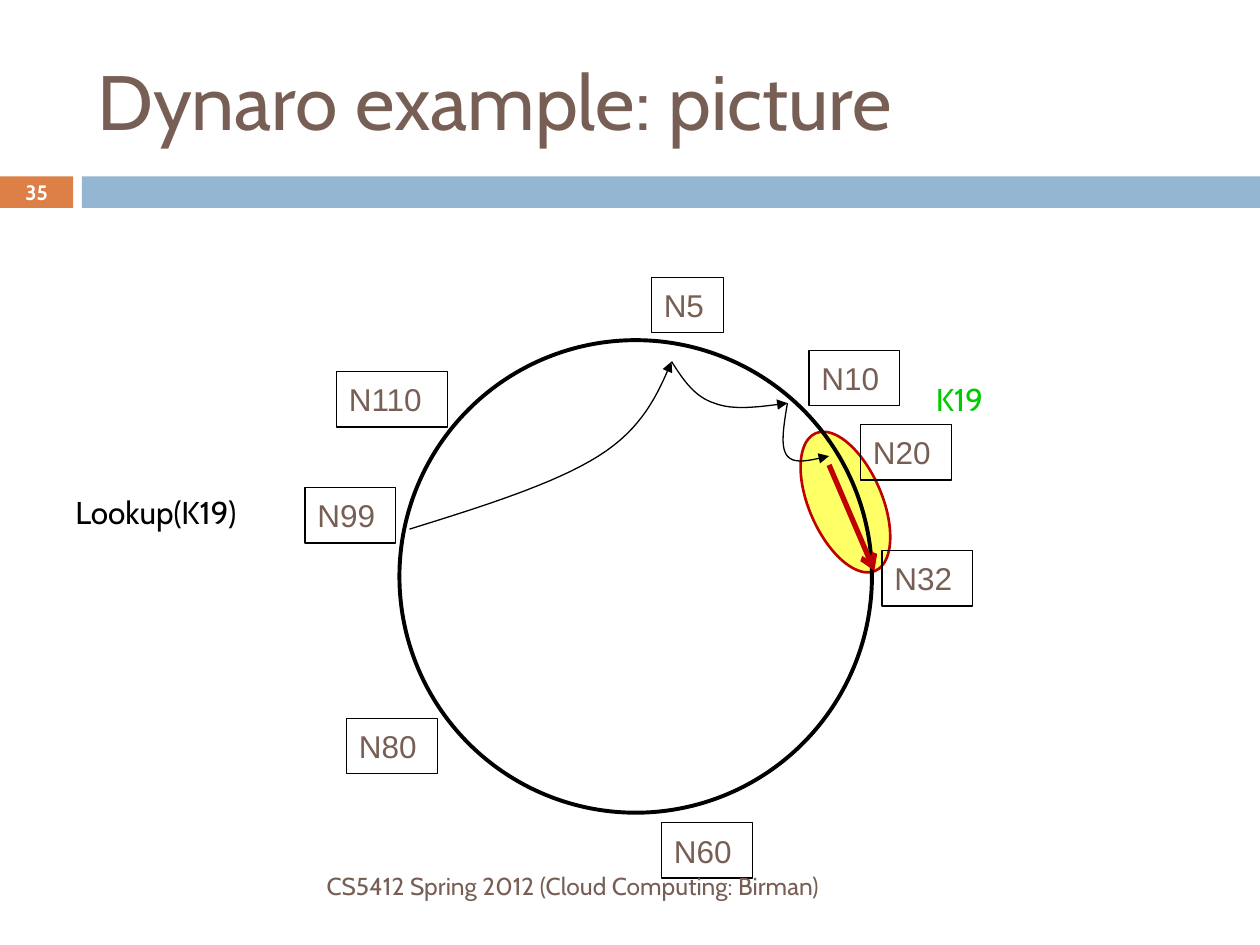
from pptx import Presentation
from pptx.dml.color import RGBColor
from pptx.enum.shapes import MSO_CONNECTOR as Connector, MSO_SHAPE as Shape
from pptx.enum.text import MSO_ANCHOR as Anchor, PP_ALIGN as Align
from pptx.oxml.ns import qn
from pptx.util import Inches, Pt
from lxml.etree import SubElement

BLACK = RGBColor(0x00, 0x00, 0x00)
WHITE = RGBColor(0xFF, 0xFF, 0xFF)
BROWN = RGBColor(0x77, 0x5F, 0x55)
ORANGE = RGBColor(0xDD, 0x80, 0x47)
BLUE = RGBColor(0x94, 0xB6, 0xD2)
YELLOW = RGBColor(0xFF, 0xFF, 0x66)
RED = RGBColor(0xC0, 0x00, 0x00)
GREEN = RGBColor(0x00, 0xCC, 0x00)

NODE_WIDTH, NODE_HEIGHT = 0.72, 0.44
NODES = [
    ("N32", 7, 4.37, NODE_WIDTH),
    ("N10", 6.42, 2.78, NODE_WIDTH),
    ("N5", 5.17, 2.2, 0.57),
    ("N20", 6.83, 3.37, NODE_WIDTH),
    ("N110", 2.67, 2.95, 0.88),
    ("N99", 2.42, 3.87, NODE_WIDTH),
    ("N80", 2.75, 5.7, NODE_WIDTH),
    ("N60", 5.25, 6.53, NODE_WIDTH),
]
HOPS = [
    [(3.25, 4.2), (3.83, 4.02), (4.4, 3.84), (4.75, 3.62),
     (5.1, 3.4), (5.22, 3.13), (5.33, 2.87)],
    [(5.33, 2.87), (5.42, 3.01), (5.51, 3.15), (5.67, 3.2),
     (5.82, 3.26), (6.03, 3.23), (6.25, 3.2)],
    [(6.25, 3.2), (6.22, 3.38), (6.19, 3.55), (6.25, 3.62),
     (6.31, 3.69), (6.44, 3.65), (6.58, 3.62)],
]
CURVE_STEPS = 16


def to_inches(box):
    """Turn a box of plain numbers into lengths."""
    return [Inches(value) for value in box]


def write_text(shape, text, size, color, font="Cabin", align=Align.LEFT, bold=False):
    """Write one formatted run into a shape."""
    frame = shape.text_frame
    frame.word_wrap = True
    frame.vertical_anchor = Anchor.MIDDLE
    paragraph = frame.paragraphs[0]
    paragraph.alignment = align
    run = paragraph.add_run()
    run.text = text
    run.font.name = font
    run.font.size = Pt(size)
    run.font.bold = bold
    run.font.color.rgb = color


def add_label(slide, box, text, size, color, **style):
    """Add a text box holding one run."""
    write_text(slide.shapes.add_textbox(*to_inches(box)), text, size, color, **style)


def style_shape(shape, fill=None, line=None, width=0.75):
    """Set fill and outline, and drop the shadow."""
    shape.shadow.inherit = False
    if fill is None:
        shape.fill.background()
    else:
        shape.fill.solid()
        shape.fill.fore_color.rgb = fill
    if line is None:
        shape.line.fill.background()
    else:
        shape.line.color.rgb = line
        shape.line.width = Pt(width)


def add_shape(slide, kind, box, **style):
    """Add a styled preset shape."""
    shape = slide.shapes.add_shape(kind, *to_inches(box))
    style_shape(shape, **style)
    return shape


def add_arrowhead(shape, kind):
    """Put an arrowhead at the end of a line."""
    SubElement(shape.line._get_or_add_ln(), qn("a:tailEnd"), type=kind)


def curve_points(controls):
    """Sample a chain of cubic Bezier segments."""
    points = [controls[0]]
    for start in range(0, len(controls) - 1, 3):
        segment = controls[start:start + 4]
        for step in range(1, CURVE_STEPS + 1):
            t = step / CURVE_STEPS
            weights = ((1 - t) ** 3, 3 * t * (1 - t) ** 2, 3 * t * t * (1 - t), t ** 3)
            points.append(tuple(
                sum(weight * point[axis] for weight, point in zip(weights, segment))
                for axis in (0, 1)))
    return points


def add_hop(slide, controls):
    """Draw one curved lookup hop with an arrowhead."""
    points = [to_inches(point) for point in curve_points(controls)]
    builder = slide.shapes.build_freeform(*points[0])
    builder.add_line_segments(points[1:], close=False)
    hop = builder.convert_to_shape()
    style_shape(hop, line=BLACK)
    add_arrowhead(hop, "triangle")


def add_header(slide, left, top, width, height):
    """Place the title, the page number and the band below them."""
    title = slide.shapes.title
    title.left, title.top, title.width, title.height = to_inches(
        (left + 0.67, top, 8.92, 1.08))
    write_text(title, "Dynaro example: picture", 44, BROWN)
    band_height = 0.25
    band_top = top + height - band_height
    badge = (left, band_top, 0.58, band_height)
    add_shape(slide, Shape.RECTANGLE, badge, fill=ORANGE)
    add_shape(slide, Shape.RECTANGLE,
              (left + 0.65, band_top, width - 0.65, band_height), fill=BLUE)
    add_label(slide, badge, "35", 11.9, WHITE, align=Align.CENTER, bold=True)


def add_ring(slide, left, top, diameter):
    """Draw the ring, its nodes, the lookup hops and the replica arrow."""
    replicas = add_shape(slide, Shape.OVAL, (left + 3.25, top + 0.69, 0.58, 1.19),
                         fill=YELLOW, line=RED, width=1.5)
    replicas.rotation = 336.6
    add_shape(slide, Shape.OVAL, (left, top, diameter, diameter), line=BLACK, width=2.25)
    for name, node_left, node_top, width in NODES:
        node = add_shape(slide, Shape.RECTANGLE,
                         (node_left, node_top, width, NODE_HEIGHT), line=BLACK)
        write_text(node, name, 18, BROWN, font="Arial")
    for controls in HOPS:
        add_hop(slide, controls)
    arrow = slide.shapes.add_connector(
        Connector.STRAIGHT,
        *to_inches((left + 3.41, top + 0.99, left + 3.77, top + 1.83)))
    arrow.line.color.rgb = RED
    arrow.line.width = Pt(3)
    add_arrowhead(arrow, "arrow")
    SubElement(arrow._element.spPr, qn("a:effectLst"))


def main():
    """Build and save the slide."""
    presentation = Presentation()
    presentation.slide_width, presentation.slide_height = Inches(10), Inches(7.5)
    slide = presentation.slides.add_slide(presentation.slide_layouts[5])
    add_header(slide, 0, 0.25, 10, 1.4)
    add_ring(slide, 3.17, 2.7, 3.75)
    add_label(slide, (0.5, 3.85, 1.77, 0.43), "Lookup(K19)", 18, BLACK)
    add_label(slide, (7.33, 2.95, 0.67, 0.43), "K19", 18, GREEN)
    add_label(slide, (0.67, 6.83, 5.93, 0.4),
              "CS5412 Spring 2012 (Cloud Computing: Birman)", 14, BROWN, align=Align.RIGHT)
    presentation.save("out.pptx")


if __name__ == "__main__":
    main()
